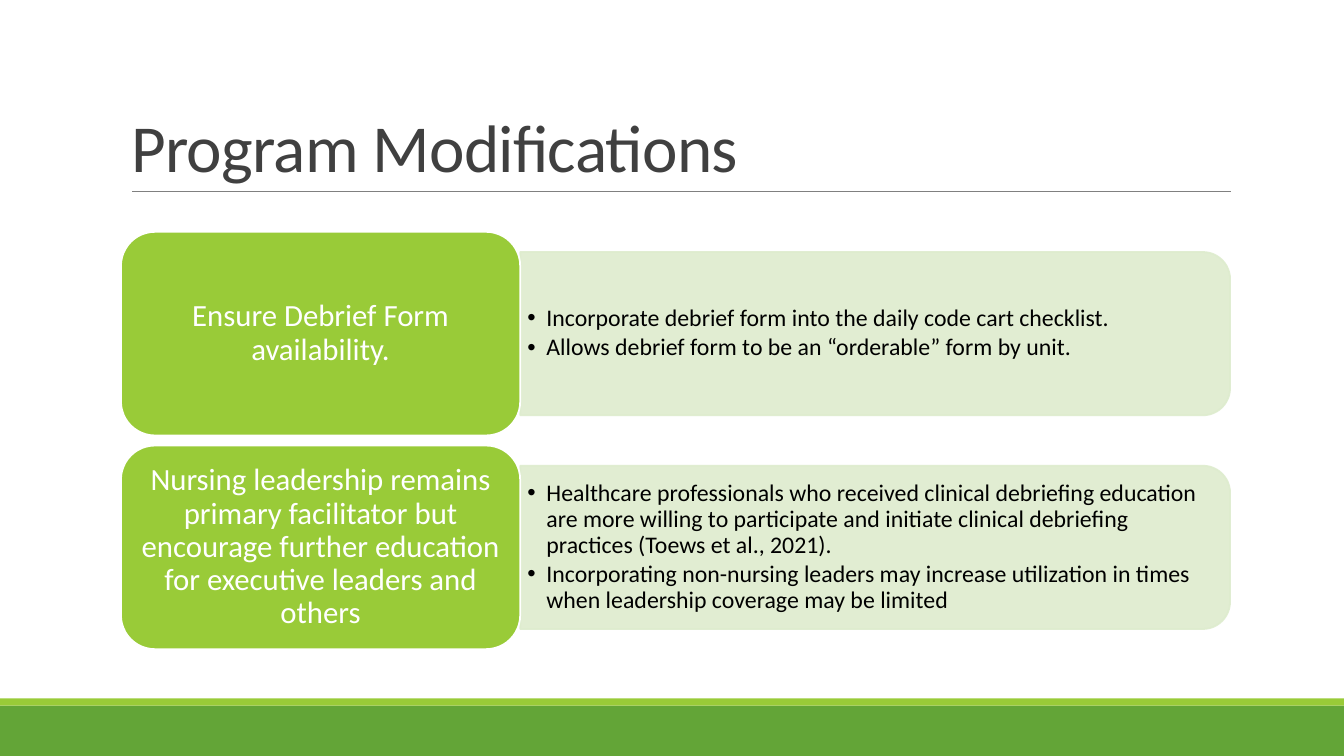
from lxml import etree
from pptx import Presentation
from pptx import util as u
from pptx.dml import color
from pptx.enum import shapes, text
from pptx.oxml import ns

COLORS = {
    "band": "63A537",
    "accent": "99CB38",
    "panel": "DEECCE",
    "rule": "808080",
    "title": "404040",
    "body": "000000",
    "white": "FFFFFF",
}
FONT = "Calibri"
TITLE_FORMAT = {"line_spacing": 0.85, "alignment": text.PP_ALIGN.LEFT}
HEADING_FORMAT = {"line_spacing": 0.9, "alignment": text.PP_ALIGN.CENTER}
BULLET_FORMAT = {
    "line_spacing": 0.9,
    "space_after": u.Pt(2.55),
    "alignment": text.PP_ALIGN.LEFT,
}
MODIFICATIONS = [
    (
        "Ensure Debrief Form availability.",
        [
            "Incorporate debrief form into the daily code cart checklist.",
            "Allows debrief form to be an “orderable” form by unit.",
        ],
    ),
    (
        "Nursing leadership remains primary facilitator but encourage further "
        "education for executive leaders and others",
        [
            "Healthcare professionals who received clinical debriefing education "
            "are more willing to participate and initiate clinical debriefing "
            "practices (Toews et al., 2021).",
            "Incorporating non-nursing leaders may increase utilization in times "
            "when leadership coverage may be limited",
        ],
    ),
]
ROW_TOP, ROW_PITCH, ROW_HEIGHT = 2.3, 2.12, 2.02
HEADING_LEFT, HEADING_WIDTH = 1.2, 3.96
PANEL_LEFT, PANEL_WIDTH, PANEL_HEIGHT = 5.16, 7.04, 1.62
BULLETS_WIDTH, BULLETS_HEIGHT = 6.96, 1.46


def rgb(name):
    return color.RGBColor.from_string(COLORS[name])


def set_values(target, values):
    for name, value in values.items():
        setattr(target, name, value)


def box(left, top, width, height):
    return [u.Inches(value) for value in (left, top, width, height)]


def add_block(slide, kind, place, fill, line=None):
    shape = slide.shapes.add_shape(kind, *box(*place))
    shape.shadow.inherit = False
    shape.fill.solid()
    shape.fill.fore_color.rgb = rgb(fill)
    if line:
        shape.line.color.rgb = rgb(line)
        shape.line.width = u.Pt(1.25)
    else:
        shape.line.fill.background()
    return shape


def set_frame(frame, anchor, horizontal, vertical):
    set_values(frame, {
        "word_wrap": True,
        "vertical_anchor": anchor,
        "margin_left": u.Inches(horizontal),
        "margin_right": u.Inches(horizontal),
        "margin_top": u.Inches(vertical),
        "margin_bottom": u.Inches(vertical),
    })


def write(paragraph, words, size, color_name, values):
    set_values(paragraph, values)
    run = paragraph.add_run()
    run.text = words
    set_values(run.font, {"size": u.Pt(size), "name": FONT})
    run.font.color.rgb = rgb(color_name)
    return run


def add_title(slide, words):
    title = slide.shapes.title
    set_values(title, dict(zip(("left", "top", "width", "height"), box(1.2, 0.31, 11, 1.59))))
    set_frame(title.text_frame, text.MSO_ANCHOR.BOTTOM, 0.1, 0.05)
    title.text_frame.auto_size = text.MSO_AUTO_SIZE.NONE
    run = write(title.text_frame.paragraphs[0], words, 48, "title", TITLE_FORMAT)
    run.font._element.set("spc", "-50")


def add_rule(slide):
    rule = slide.shapes.add_connector(
        shapes.MSO_CONNECTOR.STRAIGHT, *box(1.31, 1.9, 12.21, 1.9)
    )
    rule.line.color.rgb = rgb("rule")
    rule.line.width = u.Pt(0.5)
    etree.SubElement(rule._element.spPr, ns.qn("a:effectLst"))


def add_panel(slide, middle):
    left = PANEL_LEFT + (PANEL_WIDTH - PANEL_HEIGHT) / 2
    place = (left, middle - PANEL_WIDTH / 2, PANEL_HEIGHT, PANEL_WIDTH)
    panel = add_block(
        slide, shapes.MSO_SHAPE.ROUND_2_SAME_RECTANGLE, place, "panel", "panel"
    )
    panel.rotation = 90
    for paint in panel._element.spPr.iter(ns.qn("a:srgbClr")):
        etree.SubElement(paint, ns.qn("a:alpha"), val="90000")


def add_bullets(slide, middle, points):
    place = (PANEL_LEFT, middle - BULLETS_HEIGHT / 2, BULLETS_WIDTH, BULLETS_HEIGHT)
    frame = slide.shapes.add_textbox(*box(*place)).text_frame
    set_frame(frame, text.MSO_ANCHOR.MIDDLE, 0.07, 0.04)
    for index, point in enumerate(points):
        paragraph = frame.add_paragraph() if index else frame.paragraphs[0]
        write(paragraph, point, 17, "body", BULLET_FORMAT)
        properties = paragraph._p.get_or_add_pPr()
        indent = u.Inches(0.19)
        properties.set("marL", str(indent))
        properties.set("indent", str(-indent))
        etree.SubElement(properties, ns.qn("a:buFont"), typeface="Arial")
        etree.SubElement(properties, ns.qn("a:buChar"), char="•")


def add_heading(slide, top, words):
    place = (HEADING_LEFT, top, HEADING_WIDTH, ROW_HEIGHT)
    heading = add_block(
        slide, shapes.MSO_SHAPE.ROUNDED_RECTANGLE, place, "accent", "white"
    )
    set_frame(heading.text_frame, text.MSO_ANCHOR.MIDDLE, 0.09, 0.05)
    write(heading.text_frame.paragraphs[0], words, 22, "white", HEADING_FORMAT)


def main():
    presentation = Presentation()
    presentation.slide_width = u.Inches(13.33)
    presentation.slide_height = u.Inches(7.5)
    slide = presentation.slides.add_slide(presentation.slide_layouts.get_by_name("Title Only"))
    add_block(slide, shapes.MSO_SHAPE.RECTANGLE, (0, 7, 13.33, 0.5), "band")
    add_block(slide, shapes.MSO_SHAPE.RECTANGLE, (0, 6.93, 13.33, 0.07), "accent")
    add_rule(slide)
    add_title(slide, "Program Modifications")
    for row, (heading, points) in enumerate(MODIFICATIONS):
        top = ROW_TOP + row * ROW_PITCH
        middle = top + ROW_HEIGHT / 2
        add_panel(slide, middle)
        add_bullets(slide, middle, points)
        add_heading(slide, top, heading)
    presentation.save("out.pptx")


if __name__ == "__main__":
    main()
